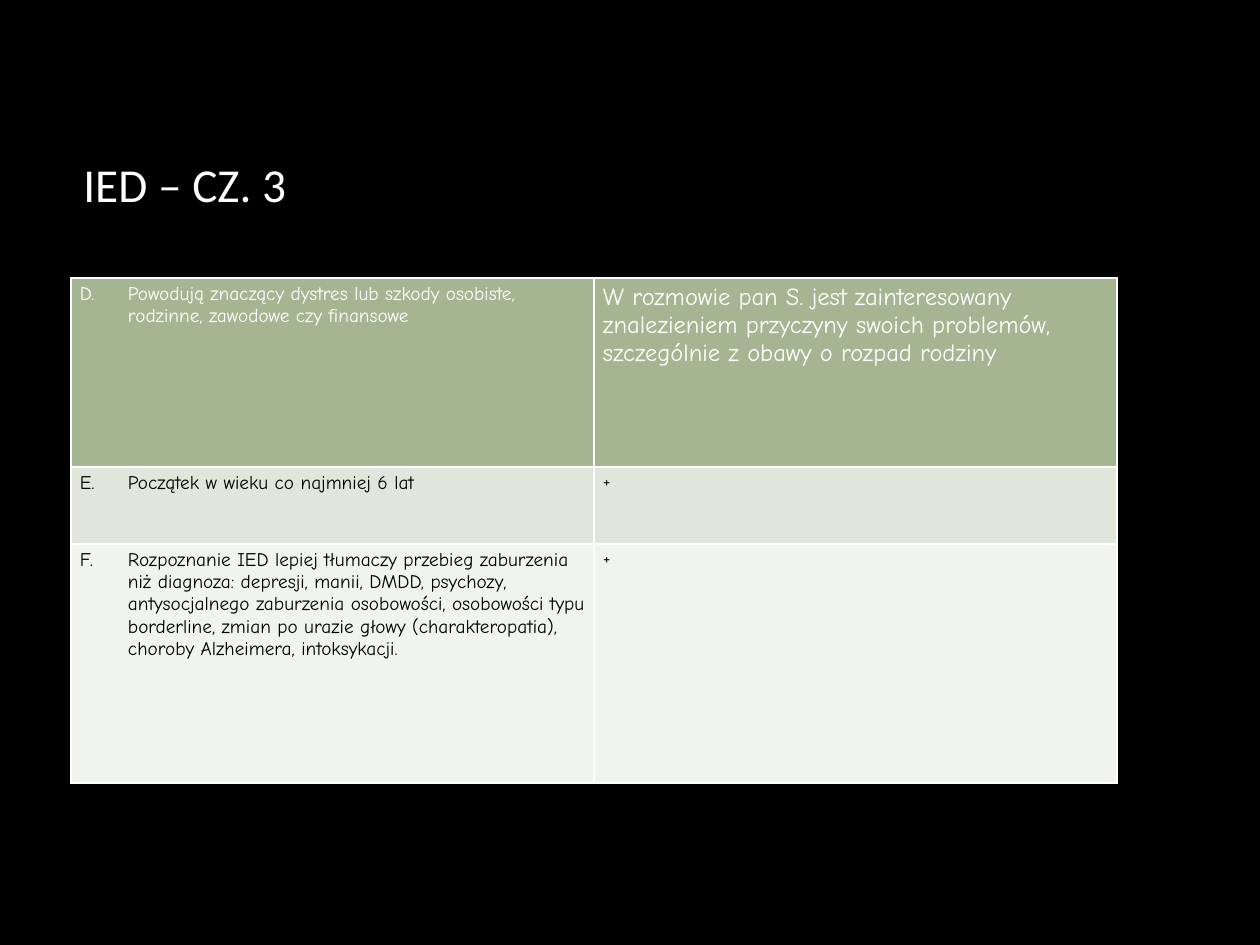
"""Build a slide with a table of IED diagnostic criteria."""
from dataclasses import dataclass

from lxml.etree import SubElement
from pptx import Presentation
from pptx.dml.color import RGBColor
from pptx.enum.text import MSO_ANCHOR
from pptx.oxml.ns import qn
from pptx.util import Pt

EMU_PER_PX = 914400 / 126
WHITE, BLACK = "FFFFFF", "000000"
TABLE_LEFT, TABLE_TOP, COLUMN_WIDTH = 71, 278, 523


@dataclass(frozen=True)
class Criterion:
    """One table row: a lettered criterion and its finding."""
    criterion: str
    finding: str
    finding_size: int
    height: int
    fill: str
    color: str = BLACK


CRITERIA = [
    Criterion("Powodują znaczący dystres lub szkody osobiste, rodzinne, zawodowe czy finansowe",
              "W rozmowie pan S. jest zainteresowany znalezieniem przyczyny swoich problemów, "
              "szczególnie z obawy o rozpad rodziny", 14, 189, "A5B592", WHITE),
    Criterion("Początek w wieku co najmniej 6 lat", "+", 10, 77, "E1E5DC"),
    Criterion("Rozpoznanie IED lepiej tłumaczy przebieg zaburzenia niż diagnoza: depresji, manii, "
              "DMDD, psychozy, antysocjalnego zaburzenia osobowości, osobowości typu borderline, "
              "zmian po urazie głowy (charakteropatia), choroby Alzheimera, intoksykacji.",
              "+", 10, 239, "F0F3EE"),
]
FIRST_NUMBER = 4


def px(length: int) -> int:
    """Turn pixels into EMU."""
    return round(length * EMU_PER_PX)


def rgb(color: str) -> RGBColor:
    """Turn a hex string into a colour."""
    return RGBColor.from_string(color)


def write(frame, text: str, *, size: int, color: str, font: str = "Comic Neue", number: int = 0):
    """Write one paragraph, lettered when a number is given."""
    frame.word_wrap = True
    para = frame.paragraphs[0]
    span = para.add_run()
    span.text = text
    span.font.size = Pt(size)
    span.font.name = font
    span.font.color.rgb = rgb(color)
    if number:
        properties = para._p.get_or_add_pPr()
        properties.set("marL", str(px(48)))
        properties.set("indent", str(-px(48)))
        SubElement(properties, qn("a:buFont"), typeface="+mj-lt")
        SubElement(properties, qn("a:buAutoNum"), type="alphaUcPeriod", startAt=str(number))


def style_cell(cell, fill: str):
    """Give a cell its margins, white borders and fill."""
    cell.margin_left = cell.margin_right = px(9)
    cell.margin_top = cell.margin_bottom = px(5)
    properties = cell._tc.get_or_add_tcPr()
    for side in ("lnL", "lnR", "lnT", "lnB"):
        line = SubElement(properties, qn(f"a:{side}"), w=str(Pt(1)))
        SubElement(SubElement(line, qn("a:solidFill")), qn("a:srgbClr"), val=WHITE)
    cell.fill.solid()
    cell.fill.fore_color.rgb = rgb(fill)


def add_title(page, text: str):
    """Add the slide title."""
    box = page.shapes.add_textbox(px(TABLE_LEFT), px(84), px(2 * COLUMN_WIDTH), px(200))
    box.text_frame.vertical_anchor = MSO_ANCHOR.MIDDLE
    write(box.text_frame, text, size=27, color=WHITE, font="Calibri")


def add_criteria(page, criteria: list[Criterion]):
    """Add the two-column table of criteria and findings."""
    height = sum(row.height for row in criteria)
    table = page.shapes.add_table(len(criteria), 2, px(TABLE_LEFT), px(TABLE_TOP),
                                  px(2 * COLUMN_WIDTH), px(height)).table
    for column in table.columns:
        column.width = px(COLUMN_WIDTH)
    for index, row in enumerate(criteria):
        table.rows[index].height = px(row.height)
        left, right = table.rows[index].cells
        for cell in (left, right):
            style_cell(cell, row.fill)
        write(left.text_frame, row.criterion, size=11, color=row.color,
              number=FIRST_NUMBER + index)
        write(right.text_frame, row.finding, size=row.finding_size, color=row.color)


def main():
    """Build and save the deck."""
    deck = Presentation()
    deck.slide_width, deck.slide_height = px(1260), px(945)
    page = deck.slides.add_slide(deck.slide_layouts[6])
    page.background.fill.solid()
    page.background.fill.fore_color.rgb = rgb(BLACK)
    add_title(page, "IED – CZ. 3")
    add_criteria(page, CRITERIA)
    deck.save("out.pptx")


if __name__ == "__main__":
    main()
